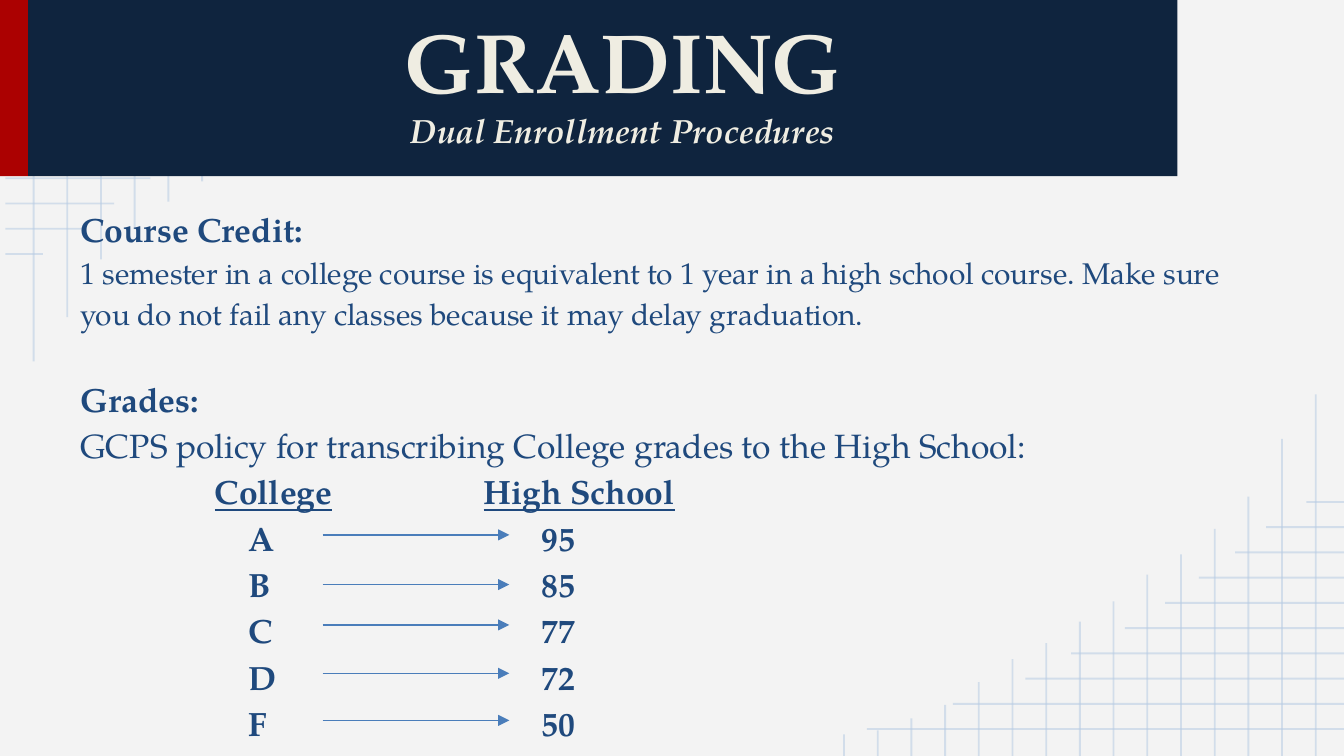
from lxml import etree
from pptx import Presentation
from pptx.dml.color import RGBColor
from pptx.enum.shapes import MSO_CONNECTOR, MSO_SHAPE
from pptx.enum.text import MSO_ANCHOR, MSO_AUTO_SIZE, PP_ALIGN
from pptx.oxml.ns import qn
from pptx.util import Inches, Pt

STRAIGHT = MSO_CONNECTOR.STRAIGHT
RECTANGLE = MSO_SHAPE.RECTANGLE
TOP, BOTTOM = MSO_ANCHOR.TOP, MSO_ANCHOR.BOTTOM
NO_AUTO_SIZE = MSO_AUTO_SIZE.NONE
CENTER = PP_ALIGN.CENTER
TITLE_ONLY = 5
WIDTH = 10
HEIGHT = WIDTH * 9 / 16
FONT = "TeX Gyre Pagella"
COLORS = {"background": "F3F3F3", "grid": "B7CCE4", "red": "AB0101",
          "navy": "0F243E", "cream": "EFEDE2", "text": "1F497D", "arrow": "4A7DBA"}

# Content
TITLE = [("GRADING", 45, False), ("Dual Enrollment Procedures", 18, True)]
# text, size, bold, space before
INTRODUCTION = [
    ("Course Credit:", 18, True, 0),
    ("1 semester in a college course is equivalent to 1 year in a high school course. "
     "Make sure you do not fail any classes because it may delay graduation.", 16, False, 0),
    ("Grades:", 18, True, 22),
    ("GCPS policy for transcribing College grades to the High School:", 18, False, 0),
]
HEADINGS = ("College", "High School")
# college grade, high school grade, arrow height
GRADES = [("A", "95", 3.98), ("B", "85", 4.35), ("C", "77", 4.65),
          ("D", "72", 5.01), ("F", "50", 5.36)]
HEADING_TABS = (1, 3)
GRADE_TABS = (1.25, 3.43)
ARROW_LEFT, ARROW_RIGHT = 2.4, 3.79

# Corner grid, measured from its corner of the slide
ROW_LENGTHS = [3.55, 2.91, 2.37, 2.03, 1.63, 1.33, 1.08, 0.81, 0.58, 0.28]
COLUMN_LENGTHS = [2.69, 2.36, 1.93, 1.69, 1.5, 1.35, 1.15, 1, 0.84, 0.72,
                  0.55, 0.38, 0.28, 0.19, 0.16]
ROW_STEP = 1.69 / 9
COLUMN_STEP = 3.51 / 14
GRID_START = 0.04
BAND_BOTTOM = 1.31


def rgb(name):
    return RGBColor.from_string(COLORS[name])


def add_line(slide, start, end, color, width):
    line = slide.shapes.add_connector(STRAIGHT, *(Inches(v) for v in (*start, *end)))
    line.line.color.rgb = rgb(color)
    line.line.width = Pt(width)
    etree.SubElement(line._element.spPr, qn("a:effectLst"))
    return line


def add_grid_line(slide, start, end, turned):
    if turned:
        start, end = [(WIDTH + GRID_START - x, HEIGHT - y) for x, y in (start, end)]
    line = add_line(slide, start, end, "grid", 1)
    color = line._element.spPr.find(".//" + qn("a:srgbClr"))
    etree.SubElement(color, qn("a:alpha"), val="54000")


def add_grid(slide, turned, covered=0):
    """Draw the staircase grid, leaving out lines that the band would cover."""
    for index, length in enumerate(ROW_LENGTHS):
        y = 0.2 + index * ROW_STEP
        if y > covered:
            add_grid_line(slide, (GRID_START, y), (GRID_START + length, y), turned)
    for index, length in enumerate(COLUMN_LENGTHS):
        x = 0.25 + index * COLUMN_STEP
        if length > covered:
            add_grid_line(slide, (x, length), (x, 0), turned)


def add_bar(slide, left, width, color):
    bar = slide.shapes.add_shape(RECTANGLE, Inches(left), Inches(-0.01),
                                 Inches(width), Inches(1.32))
    bar.shadow.inherit = False
    bar.fill.solid()
    bar.fill.fore_color.rgb = rgb(color)
    bar.line.fill.background()


def set_frame(text_frame, anchor):
    text_frame.word_wrap = True
    text_frame.auto_size = NO_AUTO_SIZE
    text_frame.vertical_anchor = anchor
    text_frame.margin_left = text_frame.margin_right = Inches(0.1)
    text_frame.margin_top = text_frame.margin_bottom = Inches(0.1)


def format_run(run, size, color, bold=True, italic=False):
    run.font.name = FONT
    run.font.size = Pt(size)
    run.font.color.rgb = rgb(color)
    run.font.bold = bold
    run.font.italic = italic


def set_tabs(paragraph, positions):
    tab_list = etree.SubElement(paragraph._p.get_or_add_pPr(), qn("a:tabLst"))
    for position in positions:
        etree.SubElement(tab_list, qn("a:tab"), pos=str(Inches(position)), algn="l")


presentation = Presentation()
presentation.slide_width, presentation.slide_height = Inches(WIDTH), Inches(HEIGHT)
slide = presentation.slides.add_slide(presentation.slide_layouts[TITLE_ONLY])
slide.background.fill.solid()
slide.background.fill.fore_color.rgb = rgb("background")

# Corner grids and title band
add_grid(slide, turned=False, covered=BAND_BOTTOM)
add_grid(slide, turned=True)
add_bar(slide, 0, 0.21, "red")
add_bar(slide, 0.21, 8.55, "navy")

# Body text
body = slide.shapes.add_textbox(Inches(0.5), Inches(1.41), Inches(9), Inches(4.17))
text_frame = body.text_frame
set_frame(text_frame, TOP)
table_lines = [(HEADINGS, HEADING_TABS)]
table_lines += [((college, school), GRADE_TABS) for college, school, _ in GRADES]
text_frame.text = "\n".join([text for text, *_ in INTRODUCTION] + [""] * len(table_lines))
paragraphs = text_frame.paragraphs
for paragraph in paragraphs:
    paragraph.line_spacing = 1.15
for paragraph, (_, size, bold, space) in zip(paragraphs, INTRODUCTION):
    paragraph.space_before = Pt(space)
    format_run(paragraph.runs[0], size, "text", bold)
for paragraph, (cells, tabs) in zip(paragraphs[len(INTRODUCTION):], table_lines):
    set_tabs(paragraph, tabs)
    for cell in cells:
        for text in ("\t", cell):
            run = paragraph.add_run()
            run.text = text
            format_run(run, 18, "text")
            run.font.underline = text in HEADINGS

# Title, brought in front of the band
title = slide.shapes.title
title.left, title.top = Inches(0.5), Inches(0.11)
title.width, title.height = Inches(8.27), Inches(1.11)
title._element.getparent().append(title._element)
set_frame(title.text_frame, BOTTOM)
title.text_frame.text = "\n".join(text for text, *_ in TITLE)
for paragraph, (_, size, italic) in zip(title.text_frame.paragraphs, TITLE):
    paragraph.alignment = CENTER
    format_run(paragraph.runs[0], size, "cream", italic=italic)

# Arrows from college to high school grades
for _, _, y in GRADES:
    arrow = add_line(slide, (ARROW_LEFT, y), (ARROW_RIGHT, y), "arrow", 0.75)
    etree.SubElement(arrow.line._get_or_add_ln(), qn("a:tailEnd"), type="triangle")

presentation.save("out.pptx")
